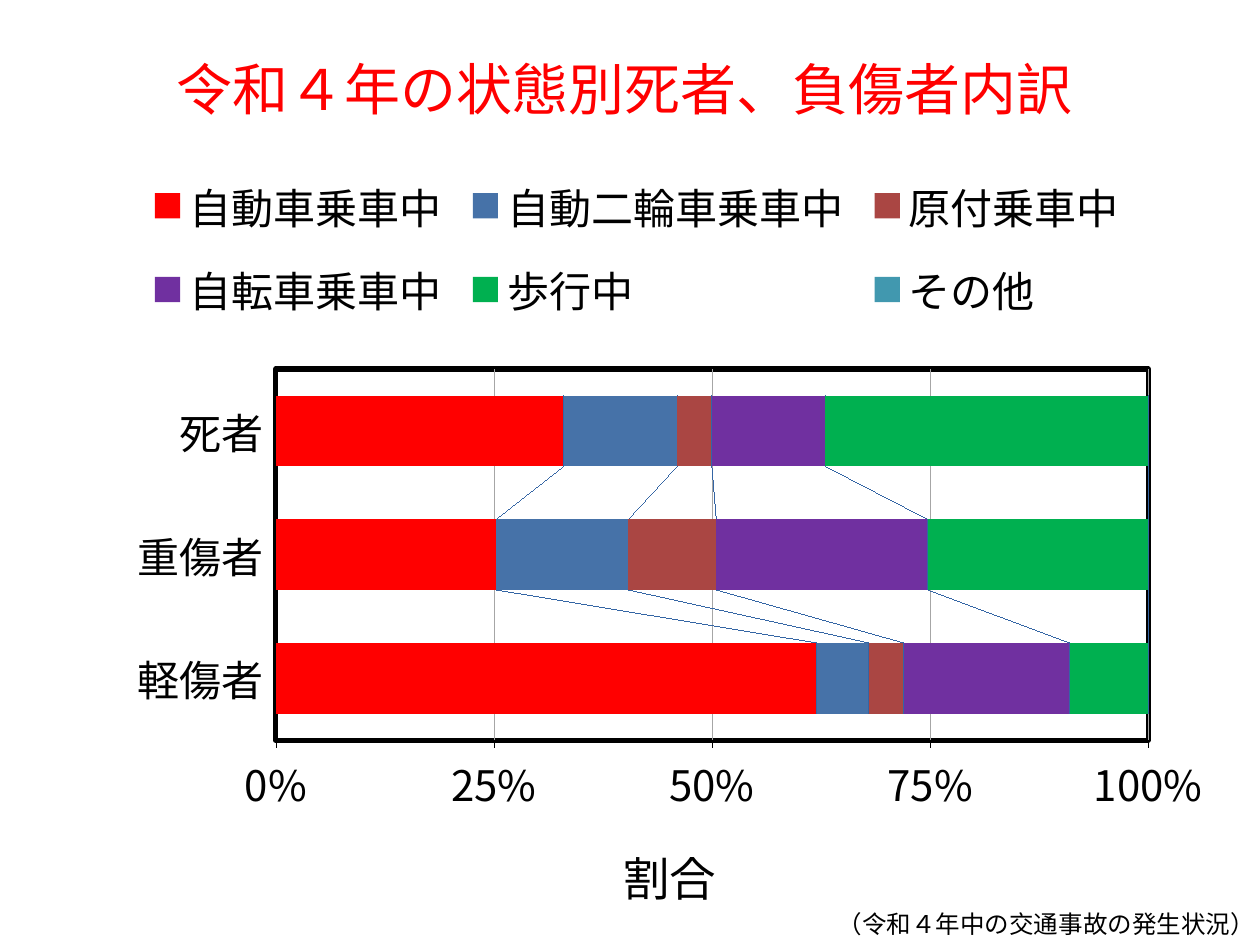
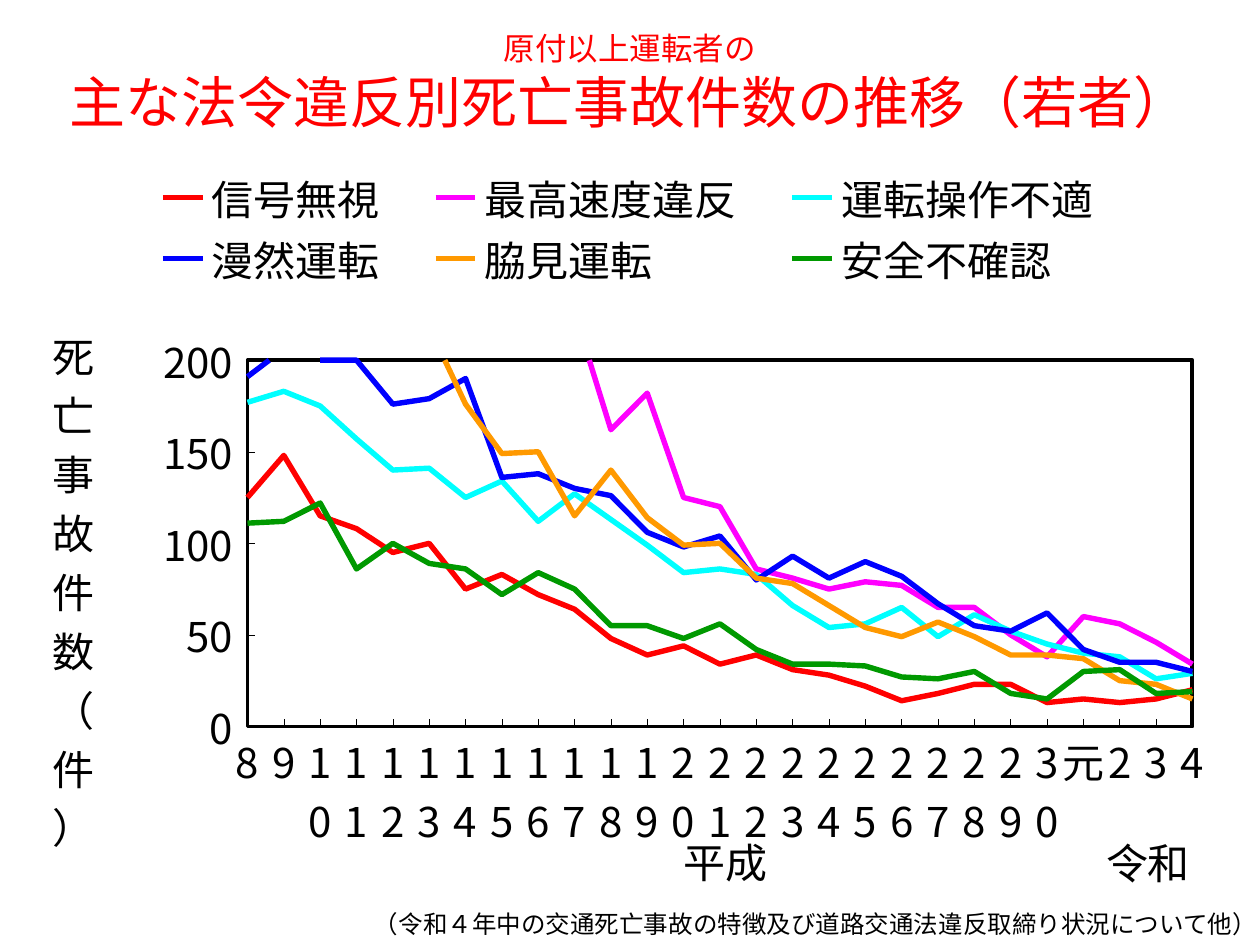
from dataclasses import dataclass
from typing import Any, NamedTuple

from lxml import etree
from pptx import Presentation, util as u
from pptx.chart.data import CategoryChartData
from pptx.dml.color import RGBColor
from pptx.enum import chart as ch, text as tx
from pptx.oxml import parse_xml
from pptx.oxml.ns import qn

WIDE, HIGH = u.Inches(10), u.Inches(7.5)
FACE = "Noto Sans CJK JP"
HEAD, BODY, SMALL, NOTE = 32, 24, 18, 14
THIN = 0.25
BLACK = RGBColor(0, 0, 0)
RED = RGBColor(0xFF, 0, 0)
STEEL = RGBColor(0x46, 0x72, 0xA8)
BRICK = RGBColor(0xAA, 0x46, 0x43)
PURPLE = RGBColor(0x70, 0x30, 0xA0)
LEAF = RGBColor(0, 0xB0, 0x50)
TEAL = RGBColor(0x41, 0x98, 0xAF)
PINK = RGBColor(0xFF, 0, 0xFF)
CYAN = RGBColor(0, 0xFF, 0xFF)
BLUE = RGBColor(0, 0, 0xFF)
AMBER = RGBColor(0xFF, 0x99, 0)
GREEN = RGBColor(0, 0x99, 0)
GREY = RGBColor(0xA6, 0xA6, 0xA6)
SPACE = ('xmlns:c="http://schemas.openxmlformats.org/drawingml/2006/chart" '
         'xmlns:a="http://schemas.openxmlformats.org/drawingml/2006/main"')


class Box(NamedTuple):
    """Left, top, width and height in percent of the whole."""
    x: float
    y: float
    w: float
    h: float


class Line(NamedTuple):
    text: str
    size: float


class Key(NamedTuple):
    name: str
    color: RGBColor


class Label(NamedTuple):
    text: str
    x: float
    y: float


class Note(NamedTuple):
    line: Line
    box: Box


@dataclass
class Graph:
    kind: Any
    box: Box
    size: float
    keys: list[Key]
    table: dict[str, tuple[int, ...]]
    plot: Box
    legend: Box
    frame: float
    cross: str
    cat: dict[str, Any]
    val: dict[str, Any]
    code: str
    names: dict[str, Label]


@dataclass
class Page:
    head: list[Line]
    top: Box
    graph: Graph
    notes: list[Note]


def apply(item: Any, look: dict[str, Any]) -> None:
    for name, value in look.items():
        setattr(item, name, value)


def scale(box: Box) -> list[int]:
    return [int(part * full / 100) for part, full in zip(box, (WIDE, HIGH) * 2)]


def style(font: Any, size: float, color: RGBColor = BLACK) -> None:
    apply(font, {"name": FACE, "size": u.Pt(size), "bold": False})
    font.color.rgb = color


def stroke(line: Any, color: RGBColor, width: float) -> None:
    line.color.rgb = color
    line.width = u.Pt(width)


def widen(root: Any) -> None:
    for latin in list(root.iter(qn("a:latin"))):
        latin.addnext(etree.Element(qn("a:ea"), typeface=FACE))


def write(slide: Any, box: Box, lines: list[Line], color: RGBColor = BLACK,
          side: Any = tx.PP_ALIGN.LEFT, wrap: bool = False) -> None:
    frame = slide.shapes.add_textbox(*scale(box)).text_frame
    apply(frame, {"word_wrap": wrap, "vertical_anchor": tx.MSO_ANCHOR.MIDDLE})
    for spot, line in enumerate(lines):
        para = frame.add_paragraph() if spot else frame.paragraphs[0]
        para.alignment = side
        run = para.add_run()
        run.text = line.text
        style(run.font, line.size, color)


def clear(host: Any, tag: str) -> None:
    for old in host.findall(qn(tag)):
        host.remove(old)


def place(host: Any, spot: int, box: tuple[float, ...], inner: bool = False) -> None:
    clear(host, "c:layout")
    goal = '<c:layoutTarget val="inner"/>' if inner else ""
    modes = "".join(f'<c:{side}Mode val="edge"/>' for side in "xy")
    sizes = "".join(f'<c:{side} val="{part / 100}"/>' for side, part in zip("xywh", box))
    host.insert(spot, parse_xml(
        f"<c:layout {SPACE}><c:manualLayout>{goal}{modes}{sizes}"
        "</c:manualLayout></c:layout>"))


def edge(color: RGBColor, width: float) -> Any:
    return parse_xml(
        f'<c:spPr {SPACE}><a:ln w="{u.Pt(width)}"><a:solidFill>'
        f'<a:srgbClr val="{color}"/></a:solidFill></a:ln></c:spPr>')


def stack(host: Any) -> None:
    body = next(host.iter(qn("a:bodyPr")))
    body.set("rot", "0")
    body.set("vert", "wordArtVert")


def trim(axis: Any, look: dict[str, Any]) -> None:
    apply(axis, {"has_major_gridlines": False,
                 "minor_tick_mark": ch.XL_TICK_MARK.NONE} | look)
    style(axis.tick_labels.font, BODY)
    stroke(axis.format.line, BLACK, THIN)
    if axis.has_major_gridlines:
        stroke(axis.major_gridlines.format.line, GREY, THIN)


def title(axis: Any, label: Label, size: float) -> None:
    frame = axis.axis_title.text_frame
    frame.text = label.text
    style(frame.paragraphs[0].runs[0].font, size)
    place(axis.axis_title.element, 1, (label.x, label.y))


def arrange(area: Any, graph: Graph) -> None:
    place(area, 0, graph.plot, True)
    clear(area, "c:spPr")
    area.append(edge(BLACK, graph.frame))
    axis = area.find(qn("c:valAx"))
    clear(axis, "c:crossBetween")
    cross = etree.Element(qn("c:crossBetween"), val=graph.cross)
    axis.find(qn("c:crosses")).addnext(cross)


def trace(plot: Any, area: Any, keys: list[Key]) -> None:
    for line, key in zip(plot.series, keys):
        line.smooth = False
        stroke(line.format.line, key.color, 3.09)
    stack(area.find(qn("c:catAx")).find(qn("c:txPr")))
    stack(area.find(qn("c:valAx")).find(qn("c:title")))


def fill(plot: Any, area: Any, keys: list[Key]) -> None:
    apply(plot, {"gap_width": 75, "overlap": 100})
    for bar, key in zip(plot.series, keys):
        bar.format.fill.solid()
        bar.format.fill.fore_color.rgb = key.color
    joins = etree.Element(qn("c:serLines"))
    joins.append(edge(STEEL, THIN))
    next(area.iter(qn("c:overlap"))).addnext(joins)


PAINT = {ch.XL_CHART_TYPE.LINE: trace, ch.XL_CHART_TYPE.BAR_STACKED_100: fill}


def draw(slide: Any, graph: Graph) -> None:
    data = CategoryChartData()
    data.categories = list(graph.table)
    for key, values in zip(graph.keys, zip(*graph.table.values())):
        data.add_series(key.name, values)
    chart = slide.shapes.add_chart(graph.kind, *scale(graph.box), data).chart
    root = chart.element
    area = next(root.iter(qn("c:plotArea")))

    apply(chart, {"has_title": False, "has_legend": True})
    style(chart.font, graph.size)
    apply(chart.legend, {"position": ch.XL_LEGEND_POSITION.TOP,
                         "include_in_layout": False})
    style(chart.legend.font, BODY)
    place(next(root.iter(qn("c:legend"))), 1, graph.legend)

    axes = {"cat": chart.category_axis, "val": chart.value_axis}
    trim(axes["cat"], graph.cat)
    trim(axes["val"], graph.val)
    apply(axes["val"].tick_labels,
          {"number_format": graph.code, "number_format_is_linked": False})
    for name, label in graph.names.items():
        title(axes[name], label, graph.size)

    arrange(area, graph)
    plot = chart.plots[0]
    plot.vary_by_categories = False
    PAINT[graph.kind](plot, area, graph.keys)
    widen(root)


STATES = Graph(
    kind=ch.XL_CHART_TYPE.BAR_STACKED_100, box=Box(4, 14, 92.2, 84.1), size=26.6,
    keys=[Key("自動車乗車中", RED), Key("自動二輪車乗車中", STEEL),
          Key("原付乗車中", BRICK), Key("自転車乗車中", PURPLE),
          Key("歩行中", LEAF), Key("その他", TEAL)],
    table={"軽傷者": (62, 6, 4, 19, 9, 0),
           "重傷者": (25, 15, 10, 24, 25, 0),
           "死者": (33, 13, 4, 13, 37, 0)},
    plot=Box(19.4, 29.8, 75.1, 46.7), legend=Box(7.5, 2.5, 86, 24),
    frame=3, cross="between",
    cat={"major_tick_mark": ch.XL_TICK_MARK.NONE,
         "tick_label_position": ch.XL_TICK_LABEL_POSITION.LOW},
    val={"major_tick_mark": ch.XL_TICK_MARK.OUTSIDE, "major_unit": 0.25,
         "has_major_gridlines": True},
    code="0%", names={"val": Label("割合", 48.6, 87.6)})

FAULTS = Graph(
    kind=ch.XL_CHART_TYPE.LINE, box=Box(2.5, 17.1, 94.7, 78.4), size=BODY,
    keys=[Key("信号無視", RED), Key("最高速度違反", PINK), Key("運転操作不適", CYAN),
          Key("漫然運転", BLUE), Key("脇見運転", AMBER), Key("安全不確認", GREEN)],
    table={"8": (125, 939, 177, 191, 301, 111),
           "9": (148, 840, 183, 206, 255, 112),
           "10": (115, 726, 175, 200, 255, 122),
           "11": (108, 628, 157, 200, 235, 86),
           "12": (95, 593, 140, 176, 213, 100),
           "13": (100, 461, 141, 179, 218, 89),
           "14": (75, 433, 125, 190, 176, 86),
           "15": (83, 315, 134, 136, 149, 72),
           "16": (72, 249, 112, 138, 150, 84),
           "17": (64, 226, 127, 130, 115, 75),
           "18": (48, 162, 113, 126, 140, 55),
           "19": (39, 182, 99, 106, 114, 55),
           "20": (44, 125, 84, 98, 99, 48),
           "21": (34, 120, 86, 104, 100, 56),
           "22": (39, 86, 83, 80, 81, 42),
           "23": (31, 81, 66, 93, 78, 34),
           "24": (28, 75, 54, 81, 66, 34),
           "25": (22, 79, 56, 90, 54, 33),
           "26": (14, 77, 65, 82, 49, 27),
           "27": (18, 65, 49, 67, 57, 26),
           "28": (23, 65, 61, 55, 49, 30),
           "29": (23, 50, 52, 52, 39, 18),
           "30": (13, 38, 45, 62, 39, 15),
           "元": (15, 60, 40, 42, 37, 30),
           "2": (13, 56, 38, 35, 25, 31),
           "3": (15, 46, 26, 35, 23, 18),
           "4": (20, 34, 29, 30, 15, 19)},
    plot=Box(18.1, 27.5, 79.2, 50.7), legend=Box(7.5, 0.7, 85, 17),
    frame=2.25, cross="midCat",
    cat={"major_tick_mark": ch.XL_TICK_MARK.INSIDE},
    val={"major_tick_mark": ch.XL_TICK_MARK.INSIDE, "major_unit": 50,
         "minimum_scale": 0, "maximum_scale": 200},
    code="#,##0_ ",
    names={"cat": Label("平成", 54, 91), "val": Label("死亡事故件数（件）", 1.1, 21)})

PAGES = [
    Page([Line("令和４年の状態別死者、負傷者内訳", HEAD)], Box(0, 1, 99.2, 16.7), STATES,
         [Note(Line("（令和４年中の交通事故の発生状況）", NOTE), Box(65.5, 95.5, 35.4, 4.5))]),
    Page([Line("原付以上運転者の", SMALL),
          Line("主な法令違反別死亡事故件数の推移（若者）", HEAD)],
         Box(0, 0.3, 100, 16.7), FAULTS,
         [Note(Line("令和", BODY), Box(86.8, 87.8, 9, 7)),
          Note(Line("（令和４年中の交通死亡事故の特徴及び道路交通法違反取締り状況について他）", NOTE),
               Box(28.7, 95.5, 72.7, 4.5))]),
]


def main() -> None:
    deck = Presentation()
    apply(deck, {"slide_width": WIDE, "slide_height": HIGH})
    for page in PAGES:
        slide = deck.slides.add_slide(deck.slide_layouts[6])
        write(slide, page.top, page.head, RED, tx.PP_ALIGN.CENTER, True)
        draw(slide, page.graph)
        for note in page.notes:
            write(slide, note.box, [note.line])
        widen(slide.element)
    deck.save("out.pptx")


if __name__ == "__main__":
    main()
